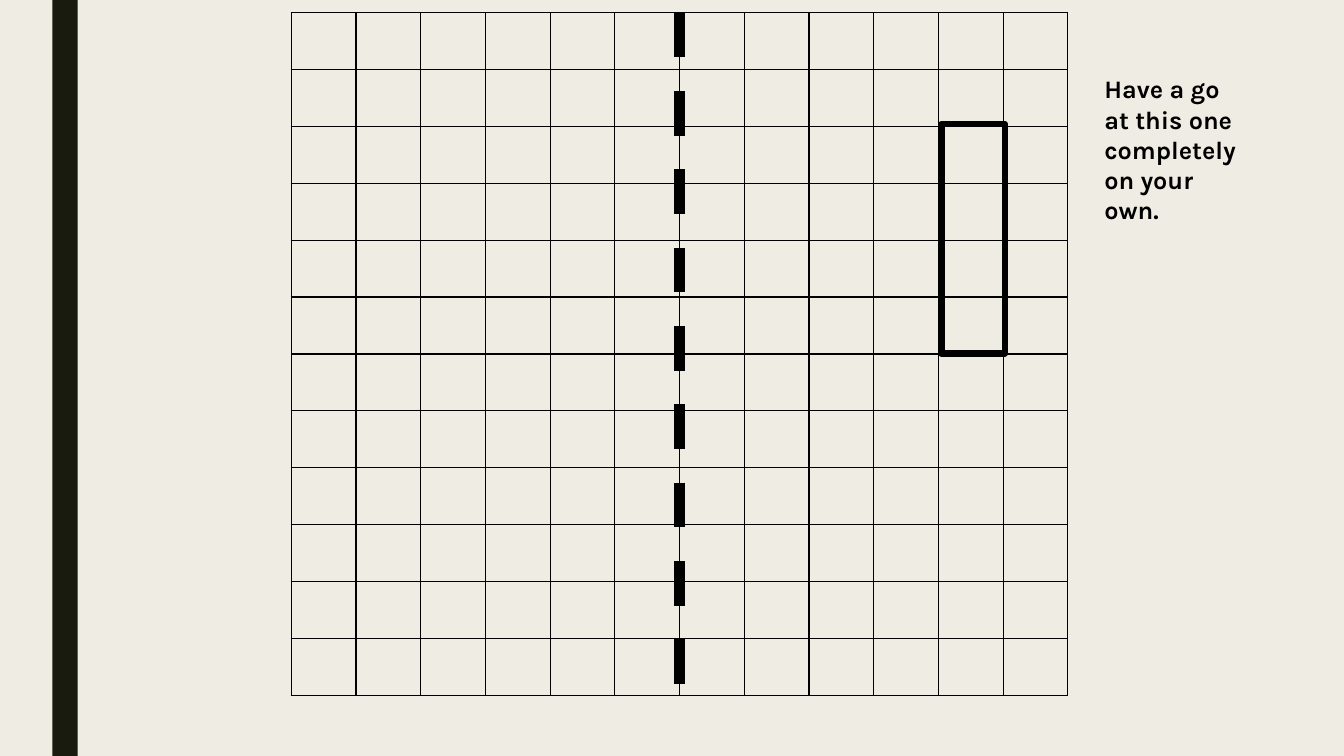
"""Build a symmetry grid slide with a mirror line and a shape to reflect."""
from dataclasses import dataclass

from lxml.etree import SubElement
from pptx import Presentation
from pptx.dml.color import RGBColor as Rgb
from pptx.enum.dml import MSO_LINE as Dash
from pptx.enum.shapes import MSO_CONNECTOR as Link, MSO_SHAPE as Form
from pptx.enum.text import MSO_AUTO_SIZE as Fit
from pptx.oxml.ns import qn
from pptx.slide import Slide
from pptx.table import _Cell as Cell
from pptx.util import Cm, Pt

INK = "000000"
SIDES = ("a:lnL", "a:lnR", "a:lnT", "a:lnB")
COUNT = 12
LEFT, TOP, WIDE, HIGH = 7.34, 0.32, 19.58, 17.2


@dataclass
class Box:
    left: float
    top: float
    wide: float
    high: float
    fill: str = ""
    line: str = ""
    size: float = 0


BOXES = [
    Box(1.32, 0, 0.64, 19.05, fill="191B0E"),
    Box(23.73, 3.13, 1.6, 5.78, line=INK, size=4.5),
]


def tint(code: str) -> Rgb:
    return Rgb.from_string(code)


def draw_box(slide: Slide, box: Box) -> None:
    shape = slide.shapes.add_shape(
        Form.RECTANGLE, Cm(box.left), Cm(box.top), Cm(box.wide), Cm(box.high))
    shape.shadow.inherit = False
    if box.fill:
        shape.fill.solid()
        shape.fill.fore_color.rgb = tint(box.fill)
    else:
        shape.fill.background()
    if box.line:
        shape.line.color.rgb = tint(box.line)
        shape.line.width = Pt(box.size)
    else:
        shape.line.fill.background()


def edge_cell(cell: Cell) -> None:
    props = cell._tc.get_or_add_tcPr()
    for side in SIDES:
        edge = SubElement(props, qn(side), w=str(Pt(1)))
        fill = SubElement(edge, qn("a:solidFill"))
        SubElement(fill, qn("a:srgbClr"), val=INK)
    cell.fill.background()


def draw_grid(slide: Slide) -> None:
    grid = slide.shapes.add_table(
        COUNT, COUNT, Cm(LEFT), Cm(TOP), Cm(WIDE), Cm(HIGH)).table
    grid.first_row = False
    grid.horz_banding = False
    for col in grid.columns:
        col.width = Cm(WIDE / COUNT)
    for row in grid.rows:
        row.height = Cm(HIGH / COUNT)
    for cell in grid.iter_cells():
        edge_cell(cell)


def draw_mirror(slide: Slide) -> None:
    mid = Cm(LEFT + WIDE / 2)
    mirror = slide.shapes.add_connector(
        Link.STRAIGHT, mid, Cm(TOP), mid, Cm(TOP + HIGH))
    mirror.line.color.rgb = tint(INK)
    mirror.line.width = Pt(8)
    mirror.line.dash_style = Dash.DASH
    SubElement(mirror._element.spPr, qn("a:effectLst"))


def draw_task(slide: Slide) -> None:
    frame = slide.shapes.add_textbox(
        Cm(27.58), Cm(1.73), Cm(4.17), Cm(3.33)).text_frame
    frame.word_wrap = True
    frame.auto_size = Fit.SHAPE_TO_FIT_TEXT
    frame.text = "Have a go at this one completely on your own."
    font = frame.paragraphs[0].runs[0].font
    font.name = "Karla"
    font.size = Pt(18)
    font.bold = True
    font.color.rgb = tint(INK)


def main() -> None:
    deck = Presentation()
    deck.slide_width, deck.slide_height = Cm(33.87), Cm(19.05)
    slide = deck.slides.add_slide(deck.slide_layouts[6])
    slide.background.fill.solid()
    slide.background.fill.fore_color.rgb = tint("EFEDE3")
    band, figure = BOXES
    draw_box(slide, band)
    draw_grid(slide)
    draw_box(slide, figure)
    draw_mirror(slide)
    draw_task(slide)
    deck.save("out.pptx")


if __name__ == "__main__":
    main()
